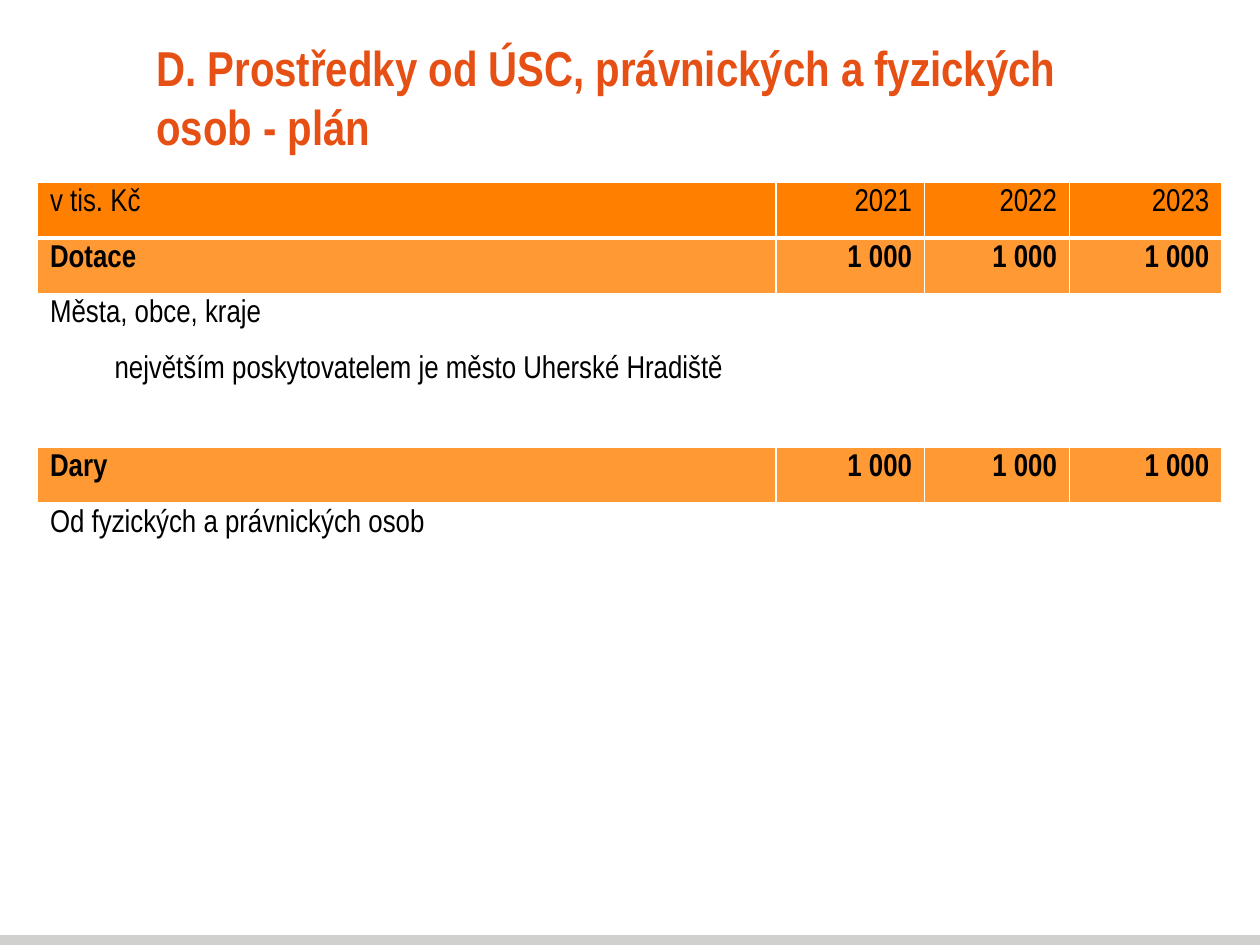
"""Build the slide with planned funds from municipalities, legal entities and individuals."""
from dataclasses import dataclass

from lxml import etree
from pptx import Presentation
from pptx.dml.color import RGBColor
from pptx.enum.shapes import MSO_SHAPE
from pptx.enum.text import MSO_ANCHOR, MSO_AUTO_SIZE, PP_ALIGN
from pptx.oxml.ns import qn
from pptx.slide import Slide
from pptx.table import _Cell
from pptx.util import Cm, Pt

LEFT, RIGHT = PP_ALIGN.LEFT, PP_ALIGN.RIGHT
MIDDLE = MSO_ANCHOR.MIDDLE
NO_AUTOFIT = MSO_AUTO_SIZE.NONE
RECTANGLE = MSO_SHAPE.RECTANGLE

FONT = "Arial Narrow"
COLORS = {
    "title": "E65014",
    "text": "000000",
    "header": "FF8001",
    "group": "FF9933",
    "plain": "FFFFFF",
    "border": "FFFFFF",
    "band": "D0D0CE",
}
COLUMN_WIDTHS = (14.88, 3.0, 2.92, 3.07)
CELL_MARGIN = 0.25


@dataclass(frozen=True)
class PlanRow:
    """One table row with its label, yearly values and look."""
    label: str
    values: tuple[str, ...] = ("", "", "")
    fill: str = "plain"
    bold: bool = False
    indent: float = 0
    height: float = 1.12
    bottom_border: float = 1


PLAN = (
    PlanRow("v tis. Kč", ("2021", "2022", "2023"), "header", bottom_border=3),
    PlanRow("Dotace", ("1 000",) * 3, "group", bold=True),
    PlanRow("Města, obce, kraje"),
    PlanRow("největším poskytovatelem je město Uherské Hradiště", indent=1.3, height=1.98),
    PlanRow("Dary", ("1 000",) * 3, "group", bold=True),
    PlanRow("Od fyzických a právnických osob"),
)


def color(key: str) -> RGBColor:
    """Look up a palette colour."""
    return RGBColor.from_string(COLORS[key])


def add_borders(cell: _Cell, top: float, bottom: float) -> None:
    """Draw the four borders of a cell, widths in points."""
    properties = cell._tc.get_or_add_tcPr()
    for side, width in (("lnL", 1), ("lnR", 1), ("lnT", top), ("lnB", bottom)):
        border = etree.SubElement(properties, qn(f"a:{side}"), w=str(Pt(width)))
        solid = etree.SubElement(border, qn("a:solidFill"))
        etree.SubElement(solid, qn("a:srgbClr"), val=COLORS["border"])


def fill_cell(cell: _Cell, text: str, row: PlanRow, align: PP_ALIGN, top_border: float) -> None:
    """Write and format one table cell."""
    add_borders(cell, top_border, row.bottom_border)
    cell.fill.solid()
    cell.fill.fore_color.rgb = color(row.fill)
    cell.text = text
    paragraph = cell.text_frame.paragraphs[0]
    paragraph.alignment = align
    paragraph.font.name = FONT
    paragraph.font.size = Pt(18)
    paragraph.font.bold = row.bold
    paragraph.font.color.rgb = color("text")


def add_plan(slide: Slide) -> None:
    """Add the table of planned funds."""
    table = slide.shapes.add_table(
        len(PLAN), len(COLUMN_WIDTHS), Cm(0.76), Cm(3.68),
        Cm(sum(COLUMN_WIDTHS)), Cm(sum(row.height for row in PLAN)),
    ).table
    for column, width in zip(table.columns, COLUMN_WIDTHS):
        column.width = Cm(width)
    top_border = 1
    for index, row in enumerate(PLAN):
        table.rows[index].height = Cm(row.height)
        for position, text in enumerate((row.label, *row.values)):
            align = RIGHT if position else LEFT
            fill_cell(table.cell(index, position), text, row, align, top_border)
        table.cell(index, 0).margin_left = Cm(CELL_MARGIN + row.indent)
        top_border = row.bottom_border


def add_title(slide: Slide) -> None:
    """Place and format the slide title."""
    title = slide.shapes.title
    title.left, title.top, title.width, title.height = Cm(2.9), Cm(0.91), Cm(20.6), Cm(2.06)
    frame = title.text_frame
    frame.text = "D. Prostředky od ÚSC, právnických a fyzických osob - plán"
    frame.word_wrap = True
    frame.auto_size = NO_AUTOFIT
    frame.vertical_anchor = MIDDLE
    heading = frame.paragraphs[0]
    heading.alignment = LEFT
    heading.font.name = FONT
    heading.font.size = Pt(28)
    heading.font.bold = True
    heading.font.color.rgb = color("title")


def add_footer_band(slide: Slide) -> None:
    """Add the grey band along the bottom edge."""
    band = slide.shapes.add_shape(RECTANGLE, 0, Cm(18.85), Cm(25.4), Cm(0.2))
    band.shadow.inherit = False
    band.fill.solid()
    band.fill.fore_color.rgb = color("band")
    band.line.fill.background()


def main() -> None:
    """Build and save the presentation."""
    presentation = Presentation()
    presentation.slide_width, presentation.slide_height = Cm(25.4), Cm(19.05)
    slide = presentation.slides.add_slide(presentation.slide_layouts[5])
    add_footer_band(slide)
    add_title(slide)
    add_plan(slide)
    presentation.save("out.pptx")


if __name__ == "__main__":
    main()
